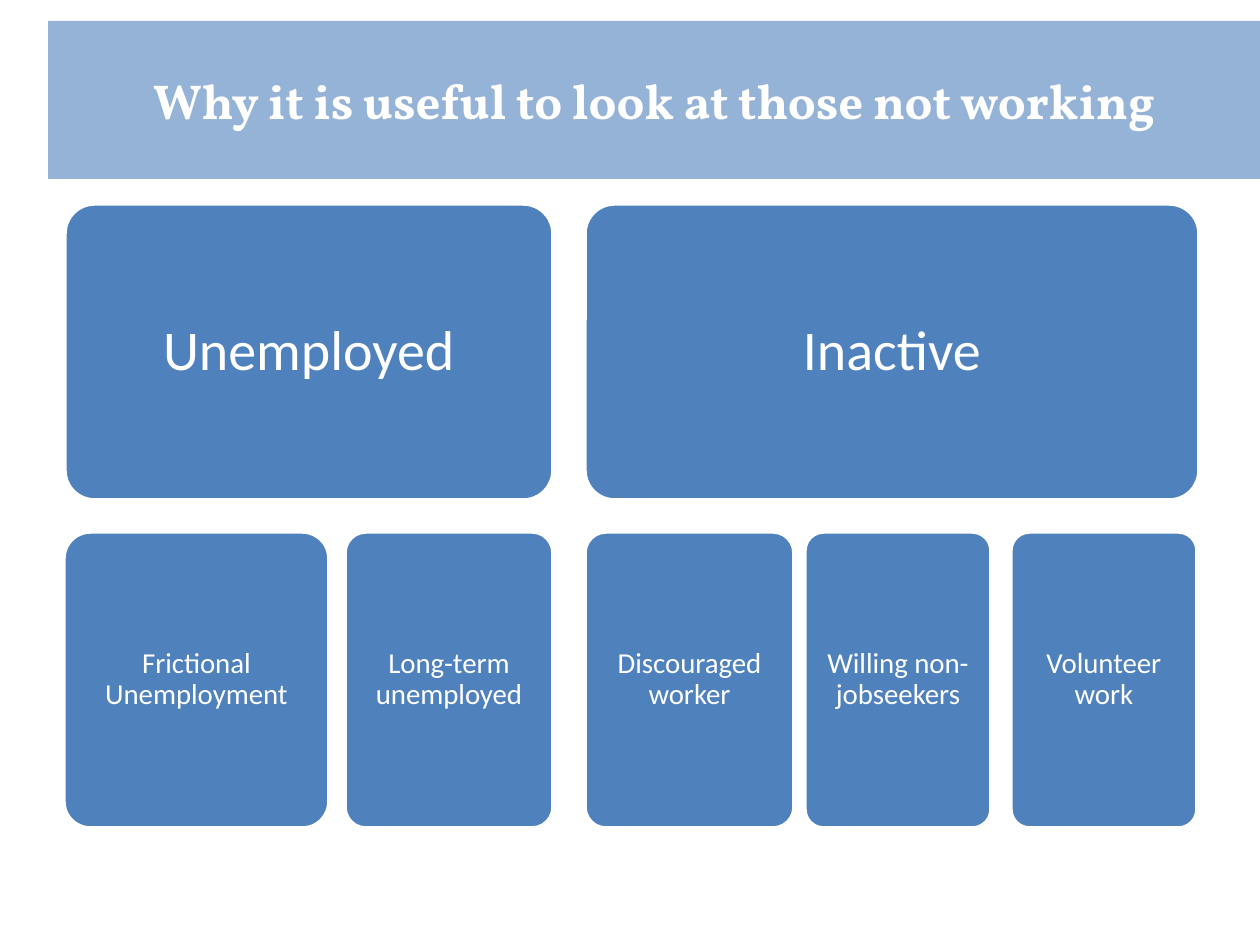
from dataclasses import dataclass

from pptx import Presentation
from pptx.dml.color import RGBColor
from pptx.enum.shapes import MSO_SHAPE
from pptx.enum.text import MSO_ANCHOR, MSO_AUTO_SIZE, PP_ALIGN
from pptx.util import Pt

PX = 914400 / 126  # EMU per px
COLORS = {"banner": "95B3D7", "card": "4F81BD", "white": "FFFFFF"}
CARD_H = 296


@dataclass(frozen=True)
class Row:
    top: int
    size: float
    inset: int


@dataclass(frozen=True)
class Card:
    text: str
    left: int
    width: int
    row: Row


GROUPS = Row(top=204, size=32, inset=16)
TYPES = Row(top=532, size=16.5, inset=9)

CARDS = [
    Card("Unemployed", 65, 488, GROUPS),
    Card("Frictional Unemployment", 64, 265, TYPES),
    Card("Long-term unemployed", 345, 208, TYPES),
    Card("Inactive", 585, 614, GROUPS),
    Card("Discouraged worker", 585, 209, TYPES),
    Card("Willing non-jobseekers", 805, 186, TYPES),
    Card("Volunteer work", 1011, 186, TYPES),
]


def px(n: int) -> int:
    return round(n * PX)


def color(name: str) -> RGBColor:
    return RGBColor.from_string(COLORS[name])


def fill(sp, name: str) -> None:
    sp.fill.solid()
    sp.fill.fore_color.rgb = color(name)


def set_text(sp, text: str, font: str, size: float, bold: bool = False) -> None:
    tf = sp.text_frame
    tf.text = text
    tf.word_wrap = True
    tf.auto_size = MSO_AUTO_SIZE.NONE
    tf.vertical_anchor = MSO_ANCHOR.MIDDLE
    p = tf.paragraphs[0]
    p.alignment = PP_ALIGN.CENTER
    r = p.runs[0]
    r.font.name = font
    r.font.size = Pt(size)
    r.font.bold = bold
    r.font.color.rgb = color("white")


def add_card(slide, card: Card) -> None:
    row = card.row
    sp = slide.shapes.add_shape(
        MSO_SHAPE.ROUNDED_RECTANGLE,
        px(card.left), px(row.top), px(card.width), px(CARD_H),
    )
    sp.adjustments[0] = 0.1
    sp.shadow.inherit = False
    fill(sp, "card")
    sp.line.color.rgb = color("white")
    sp.line.width = Pt(2)
    set_text(sp, card.text, "Calibri", row.size)
    tf = sp.text_frame
    tf.margin_left = tf.margin_right = px(row.inset)
    tf.margin_top = tf.margin_bottom = px(row.inset)
    tf.paragraphs[0].line_spacing = 0.9


def main() -> None:
    prs = Presentation()
    prs.slide_width, prs.slide_height = px(1260), px(945)
    slide = prs.slides.add_slide(prs.slide_layouts[5])

    # Title banner
    title = slide.shapes.title
    title.left, title.top, title.width, title.height = map(px, (48, 21, 1212, 158))
    fill(title, "banner")
    set_text(title, "Why it is useful to look at those not working", "Vollkorn", 28, bold=True)

    # Groups of people not working, with their types below
    for card in CARDS:
        add_card(slide, card)

    prs.save("out.pptx")


if __name__ == "__main__":
    main()
